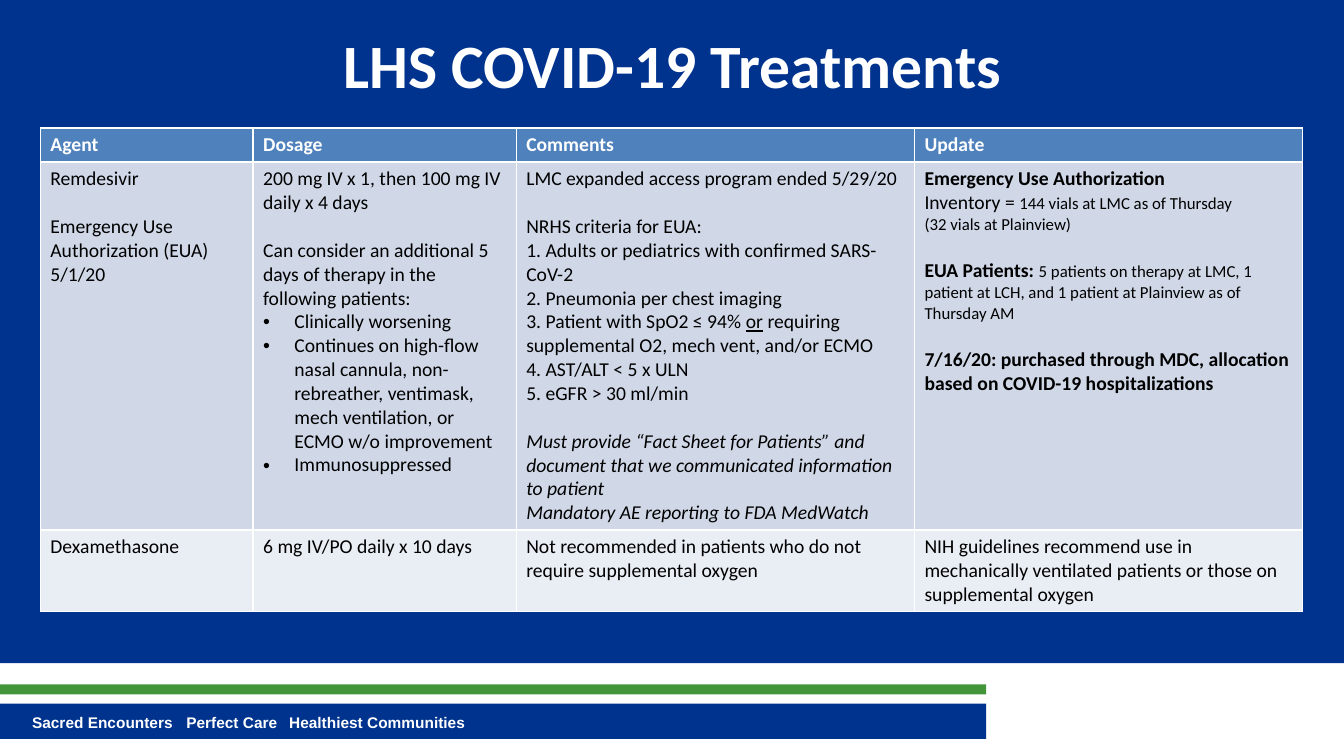
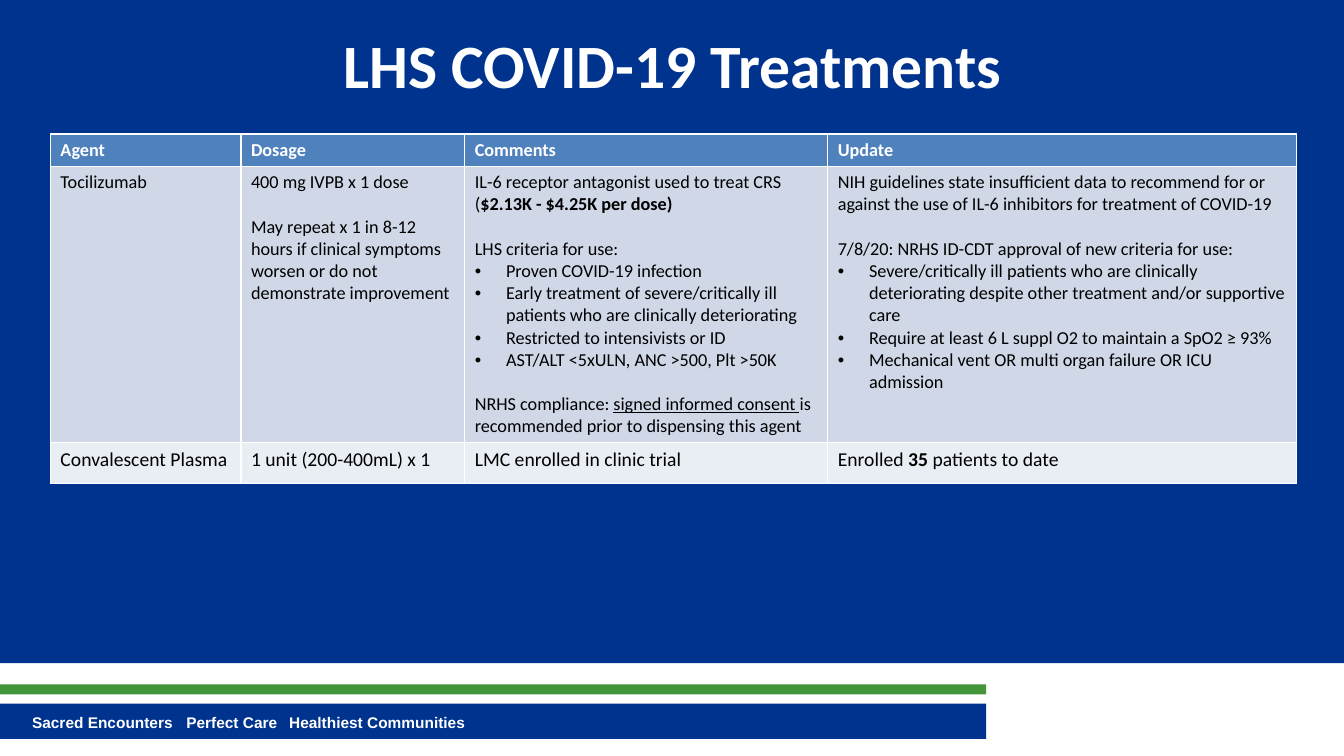
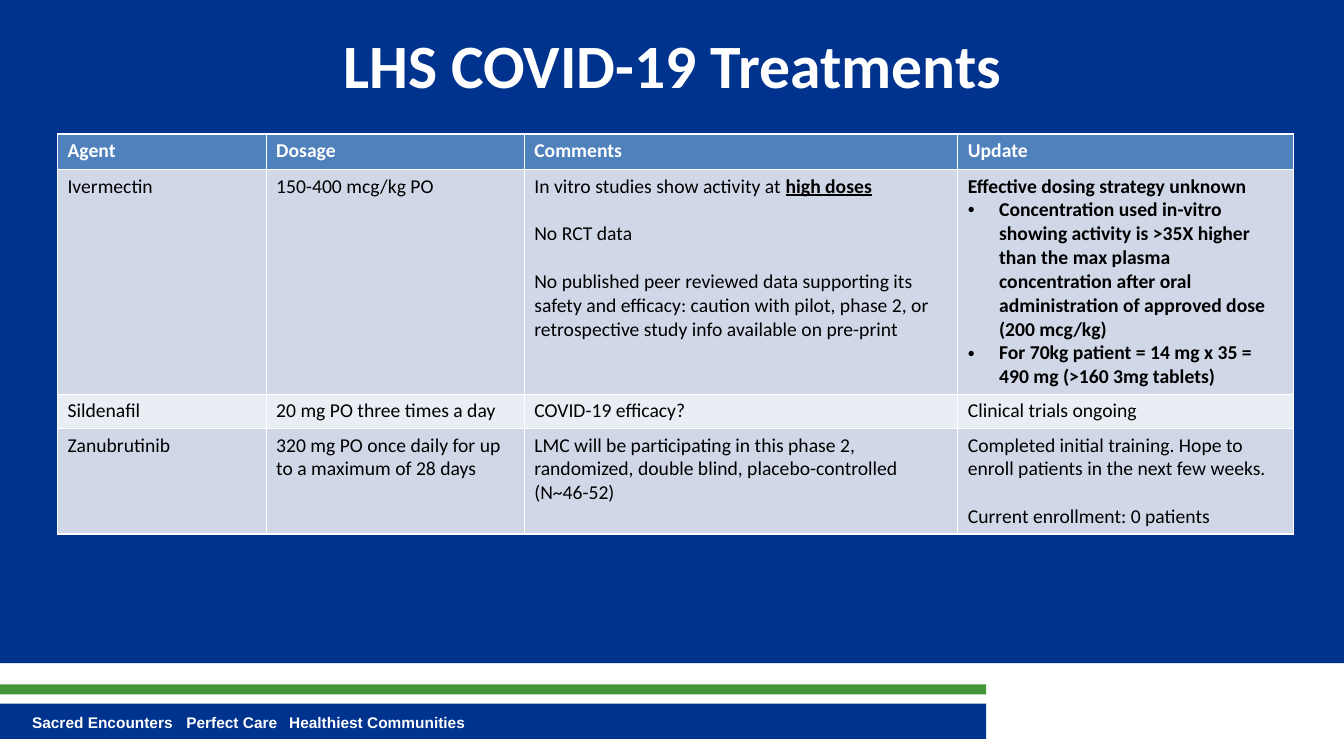
from dataclasses import dataclass

from lxml import etree
from pptx import Presentation
from pptx.dml.color import RGBColor
from pptx.enum.shapes import MSO_SHAPE
from pptx.enum.text import MSO_ANCHOR, PP_ALIGN
from pptx.oxml.ns import qn
from pptx.util import Inches, Pt

RECTANGLE = MSO_SHAPE.RECTANGLE
MIDDLE = MSO_ANCHOR.MIDDLE
CENTER = PP_ALIGN.CENTER
TITLE_ONLY = 5
LINE_HEIGHT = 1.22
SMALL = 12

COLORS = {
    "navy": "00338E",
    "green": "439539",
    "white": "FFFFFF",
    "black": "000000",
    "header": "4F81BD",
    "odd_row": "D0D8E8",
    "even_row": "E9EDF4",
}
BANDS = [
    (0, 0, 13.33, 6.58, "navy"),
    (-0.03, 6.98, 9.81, 0.35, "navy"),
    (-0.03, 6.79, 9.81, 0.1, "green"),
    (0, 0, 13.33, 1.17, "navy"),
]
MOTTO = ["Sacred Encounters", "Perfect Care", "Healthiest Communities"]
MOTTO_TABS = [1.53, 2.55]
TITLE = "LHS COVID-19 Treatments"
HEADINGS = ["Agent", "Dosage", "Comments", "Update"]


@dataclass
class Para:
    runs: list
    gap: bool = False
    bullet: bool = False
    bold: bool = False
    italic: bool = False
    size: int = 0


def line(*runs, **style):
    return Para(list(runs), **style)


def after_gap(*runs, **style):
    return Para(list(runs), gap=True, **style)


def bullet(*runs, **style):
    return Para(list(runs), bullet=True, **style)


def rgb(name):
    return RGBColor.from_string(COLORS[name])


class Deck:
    def __init__(self):
        self.prs = Presentation()
        self.prs.slide_width = Inches(13.33)
        self.prs.slide_height = Inches(7.5)
        self.layout = self.prs.slide_layouts[TITLE_ONLY]
        self.slide = None

    def start_slide(self):
        self.slide = self.prs.slides.add_slide(self.layout)
        if len(self.prs.slides) == 1:
            self.furnish_layout()
        self.title(TITLE)

    def furnish_layout(self):
        parts = [self.band(*band) for band in BANDS] + [self.motto()]
        for part in parts:
            self.layout.shapes._spTree.append(part._element)

    def font(self, paragraph, size, color, name="Calibri", bold=False, italic=False):
        font = paragraph.font
        font.name = name
        font.size = Pt(size)
        font.bold = bold
        font.italic = italic
        font.color.rgb = rgb(color)

    def band(self, left, top, width, height, color):
        band = self.slide.shapes.add_shape(
            RECTANGLE, Inches(left), Inches(top), Inches(width), Inches(height))
        band.shadow.inherit = False
        band.fill.solid()
        band.fill.fore_color.rgb = rgb(color)
        band.line.fill.background()
        return band

    def motto(self):
        motto = self.slide.shapes.add_textbox(
            Inches(0.22), Inches(7.03), Inches(8.33), Inches(0.29))
        motto.text_frame.word_wrap = True
        paragraph = motto.text_frame.paragraphs[0]
        paragraph.text = "\t".join(MOTTO)
        tabs = etree.SubElement(paragraph._p.get_or_add_pPr(), qn("a:tabLst"))
        for position in MOTTO_TABS:
            etree.SubElement(tabs, qn("a:tab"), pos=str(Inches(position)), algn="l")
        self.font(paragraph, 11, "white", name="Arial", bold=True)
        return motto

    def title(self, text):
        title = self.slide.shapes.title
        title.left, title.top = Inches(0.67), Inches(0.17)
        title.width, title.height = Inches(12), Inches(0.92)
        title.text_frame.text = text
        title.text_frame.vertical_anchor = MIDDLE
        paragraph = title.text_frame.paragraphs[0]
        paragraph.alignment = CENTER
        self.font(paragraph, 44, "white", bold=True)

    def paragraph(self, paragraph, para, size, color):
        if para.bullet:
            props = paragraph._p.get_or_add_pPr()
            props.set("marL", str(Inches(0.31)))
            props.set("indent", str(-Inches(0.31)))
            etree.SubElement(props, qn("a:buFont"), typeface="Arial")
            etree.SubElement(props, qn("a:buChar"), char="•")
        if para.gap:
            paragraph.space_before = Pt(round(size * LINE_HEIGHT, 1))
        self.font(paragraph, para.size or size, color, bold=para.bold, italic=para.italic)
        for part in para.runs:
            text, style = (part, {}) if isinstance(part, str) else part
            run = paragraph.add_run()
            run.text = text
            for attribute, value in style.items():
                setattr(run.font, attribute, value)

    def cell(self, cell, paras, size, color, fill):
        cell.fill.solid()
        cell.fill.fore_color.rgb = rgb(fill)
        frame = cell.text_frame
        for index, para in enumerate(paras):
            target = frame.add_paragraph() if index else frame.paragraphs[0]
            self.paragraph(target, para, size, color)

    def table(self, left, top, widths, heights, sizes, body):
        rows = [[[line(heading, bold=True)] for heading in HEADINGS]] + body
        table = self.slide.shapes.add_table(
            len(rows), len(widths), Inches(left), Inches(top),
            Inches(sum(widths)), Inches(sum(heights))).table
        for column, width in zip(table.columns, widths):
            column.width = Inches(width)
        for index, (height, size, cells) in enumerate(zip(heights, sizes, rows)):
            table.rows[index].height = Inches(height)
            color = "black" if index else "white"
            fill = ("odd_row" if index % 2 else "even_row") if index else "header"
            for column, paras in enumerate(cells):
                self.cell(table.cell(index, column), paras, size, color, fill)


BOLD = {"bold": True}
UNDERLINED = {"underline": True}
SMALLER = {"size": Pt(SMALL)}

ANTIVIRALS = [
    [
        [line("Remdesivir"), after_gap("Emergency Use Authorization (EUA) 5/1/20")],
        [
            line("200 mg IV x 1, then 100 mg IV daily x 4 days"),
            after_gap("Can consider an additional 5 days of therapy in the following patients:"),
            bullet("Clinically worsening"),
            bullet("Continues on high-flow nasal cannula, non-rebreather, ventimask, "
                   "mech ventilation, or ECMO w/o improvement"),
            bullet("Immunosuppressed"),
        ],
        [
            line("LMC expanded access program ended 5/29/20"),
            after_gap("NRHS criteria for EUA:"),
            line("1. Adults or pediatrics with confirmed SARS-CoV-2"),
            line("2. Pneumonia per chest imaging"),
            line("3. Patient with SpO2 ≤ 94% ", ("or", UNDERLINED),
                 " requiring supplemental O2, mech vent, and/or ECMO"),
            line("4. AST/ALT < 5 x ULN"),
            line("5. eGFR > 30 ml/min"),
            after_gap("Must provide “Fact Sheet for Patients” and document that we "
                      "communicated information to patient", italic=True),
            line("Mandatory AE reporting to FDA MedWatch", italic=True),
        ],
        [
            line("Emergency Use Authorization", bold=True),
            line("Inventory = ", ("144 vials at LMC as of Thursday", SMALLER)),
            line("(32 vials at Plainview)", size=SMALL),
            after_gap(("EUA Patients: ", BOLD),
                      ("5 patients on therapy at LMC, 1 patient at LCH, and 1 patient "
                       "at Plainview as of Thursday AM", SMALLER)),
            after_gap("7/16/20: purchased through MDC, allocation based on COVID-19 "
                      "hospitalizations", bold=True),
        ],
    ],
    [
        [line("Dexamethasone")],
        [line("6 mg IV/PO daily x 10 days")],
        [line("Not recommended in patients who do not require supplemental oxygen")],
        [line("NIH guidelines recommend use in mechanically ventilated patients or "
              "those on supplemental oxygen")],
    ],
]

IMMUNE_THERAPIES = [
    [
        [line("Tocilizumab")],
        [
            line("400 mg IVPB x 1 dose"),
            after_gap("May repeat x 1 in 8-12 hours if clinical symptoms worsen or do "
                      "not demonstrate improvement"),
        ],
        [
            line("IL-6 receptor antagonist used to treat CRS (",
                 ("$2.13K - $4.25K per dose)", BOLD)),
            after_gap("LHS criteria for use:"),
            bullet("Proven COVID-19 infection"),
            bullet("Early treatment of severe/critically ill patients who are "
                   "clinically deteriorating"),
            bullet("Restricted to intensivists or ID"),
            bullet("AST/ALT <5xULN, ANC >500, Plt >50K"),
            after_gap("NRHS compliance: ", ("signed informed consent ", UNDERLINED),
                      "is recommended prior to dispensing this agent"),
        ],
        [
            line("NIH guidelines state insufficient data to recommend for or against "
                 "the use of IL-6 inhibitors for treatment of COVID-19"),
            after_gap("7/8/20: NRHS ID-CDT approval of new criteria for use:"),
            bullet("Severe/critically ill patients who are clinically deteriorating "
                   "despite other treatment and/or supportive care"),
            bullet("Require at least 6 L suppl O2 to maintain a SpO2 ≥ 93%"),
            bullet("Mechanical vent OR multi organ failure OR ICU admission"),
        ],
    ],
    [
        [line("Convalescent Plasma")],
        [line("1 unit (200-400mL) x 1")],
        [line("LMC enrolled in clinic trial")],
        [line("Enrolled ", ("35", BOLD), " patients to date")],
    ],
]

INVESTIGATIONAL = [
    [
        [line("Ivermectin")],
        [line("150-400 mcg/kg PO")],
        [
            line("In vitro studies show activity at ", ("high doses", BOLD | UNDERLINED)),
            after_gap("No RCT data"),
            after_gap("No published peer reviewed data supporting its safety and "
                      "efficacy: caution with pilot, phase 2, or retrospective study "
                      "info available on pre-print"),
        ],
        [
            line("Effective dosing strategy unknown", bold=True),
            bullet("Concentration used in-vitro showing activity is >35X higher than "
                   "the max plasma concentration after oral administration of approved "
                   "dose (200 mcg/kg)", bold=True),
            bullet("For 70kg patient = 14 mg x 35 = 490 mg (>160 3mg tablets)", bold=True),
        ],
    ],
    [
        [line("Sildenafil")],
        [line("20 mg PO three times a day")],
        [line("COVID-19 efficacy?")],
        [line("Clinical trials ongoing")],
    ],
    [
        [line("Zanubrutinib")],
        [line("320 mg PO once daily for up to a maximum of 28 days")],
        [line("LMC will be participating in this phase 2, randomized, double blind, "
              "placebo-controlled (N~46-52)")],
        [
            line("Completed initial training. Hope to enroll patients in the next few weeks."),
            after_gap("Current enrollment: 0 patients"),
        ],
    ],
]

TREATMENT_TABLES = [
    (0.4, 1.27, [2.11, 2.61, 3.95, 3.85], [0.33, 3.65, 0.81], [14] * 3, ANTIVIRALS),
    (0.5, 1.33, [1.89, 2.22, 3.6, 4.65], [0.32, 2.74, 0.4], [13, 13, 14], IMMUNE_THERAPIES),
    (0.57, 1.33, [2.07, 2.56, 4.3, 3.33], [0.35, 2.23, 0.34, 1.04], [14] * 4, INVESTIGATIONAL),
]


def main():
    deck = Deck()
    for treatment_table in TREATMENT_TABLES:
        deck.start_slide()
        deck.table(*treatment_table)
    deck.prs.save("out.pptx")


if __name__ == "__main__":
    main()
